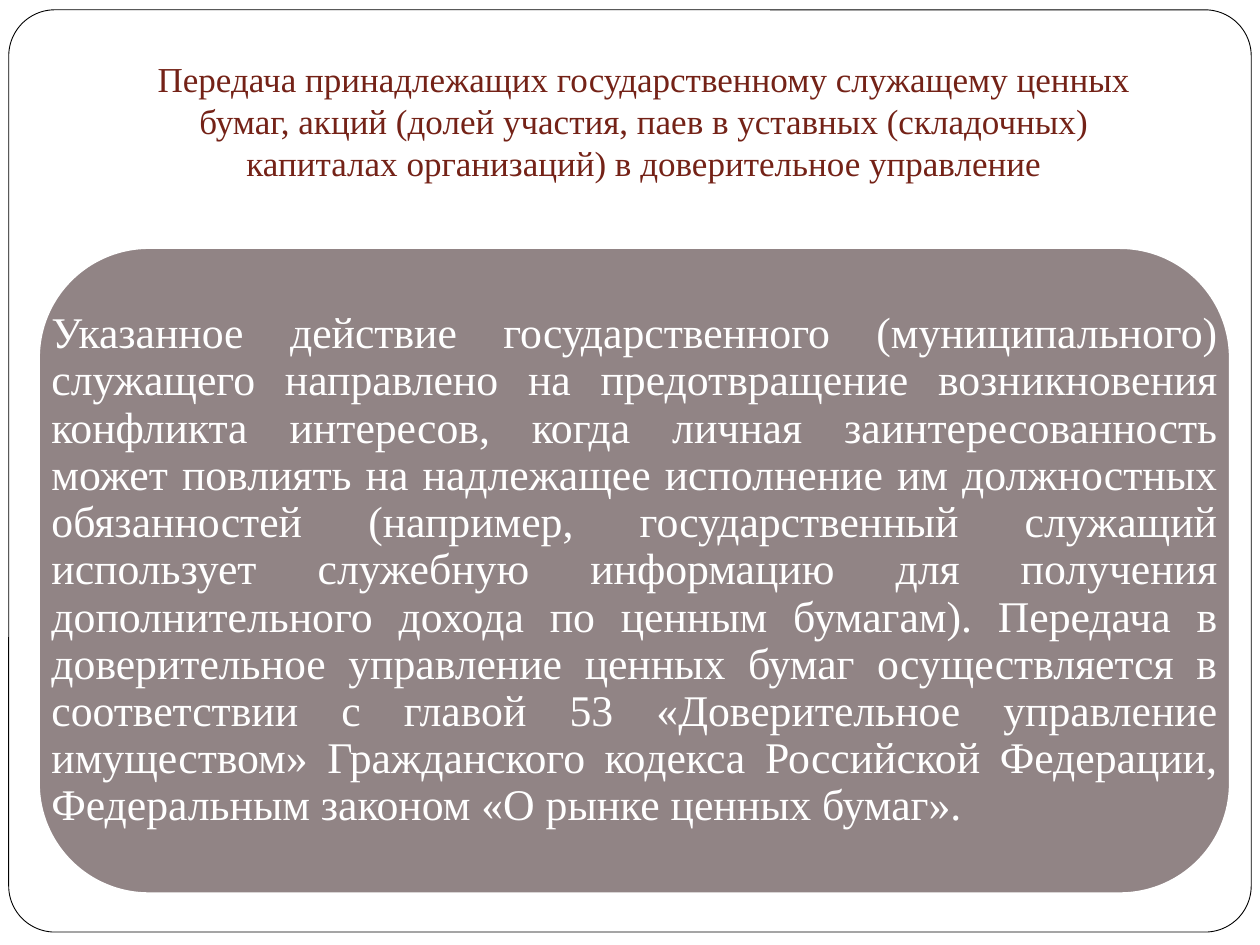
import pptx
import pptx.dml.color
import pptx.enum.shapes
import pptx.enum.text
import pptx.util

Pt = pptx.util.Pt
RGBColor = pptx.dml.color.RGBColor
Align = pptx.enum.text.PP_ALIGN
Anchor = pptx.enum.text.MSO_ANCHOR

WHITE = RGBColor(0xFF, 0xFF, 0xFF)
BLACK = RGBColor(0x00, 0x00, 0x00)
MAROON = RGBColor(0x74, 0x22, 0x17)
TAUPE = RGBColor(0x91, 0x84, 0x85)

TITLE = (
    "Передача принадлежащих государственному служащему ценных бумаг, акций "
    "(долей участия, паев в уставных (складочных) капиталах организаций) "
    "в доверительное управление"
)
BODY = (
    "Указанное действие государственного (муниципального) служащего направлено "
    "на предотвращение возникновения конфликта интересов, когда личная "
    "заинтересованность может повлиять на надлежащее исполнение им должностных "
    "обязанностей (например, государственный служащий использует служебную "
    "информацию для получения дополнительного дохода по ценным бумагам). "
    "Передача в доверительное управление ценных бумаг осуществляется в "
    "соответствии с главой 53 «Доверительное управление имуществом» "
    "Гражданского кодекса Российской Федерации, Федеральным законом "
    "«О рынке ценных бумаг»."
)


class SlideBuilder:
    font = "Times New Roman"
    inset = 7.2

    def __init__(self, slide):
        self.s = slide

    def rounded_box(self, box, radius, fill, line, width):
        kind = pptx.enum.shapes.MSO_SHAPE.ROUNDED_RECTANGLE
        sp = self.s.shapes.add_shape(kind, *map(Pt, box))
        sp.adjustments[0] = radius
        sp.shadow.inherit = False
        sp.fill.solid()
        sp.fill.fore_color.rgb = fill
        sp.line.color.rgb = line
        sp.line.width = Pt(width)

    def text(self, box, content, size, color, align, anchor, spacing=1.0):
        tf = self.s.shapes.add_textbox(*map(Pt, box)).text_frame
        tf.word_wrap = True
        tf.vertical_anchor = anchor
        tf.margin_left = tf.margin_right = Pt(self.inset)
        tf.margin_top = tf.margin_bottom = Pt(self.inset)
        p = tf.paragraphs[0]
        p.alignment = align
        p.line_spacing = spacing
        r = p.add_run()
        r.text = content
        r.font.name = self.font
        r.font.size = Pt(size)
        r.font.color.rgb = color


def main():
    prs = pptx.Presentation()
    prs.slide_width = Pt(720)
    prs.slide_height = Pt(540)
    b = SlideBuilder(prs.slides.add_slide(prs.slide_layouts[6]))

    frame = (5, 5.6, 710, 527)
    heading = (62, 22.3, 612, 90)
    panel = (22.3, 141.8, 680.4, 368.6)

    b.rounded_box(frame, 0.05, WHITE, BLACK, 0.5)
    b.text(heading, TITLE, 20, MAROON, Align.CENTER, Anchor.BOTTOM)
    b.rounded_box(panel, 0.17, TAUPE, WHITE, 1)
    b.text(panel, BODY, 25, WHITE, Align.JUSTIFY, Anchor.MIDDLE, 0.9)

    prs.save("out.pptx")


if __name__ == "__main__":
    main()
